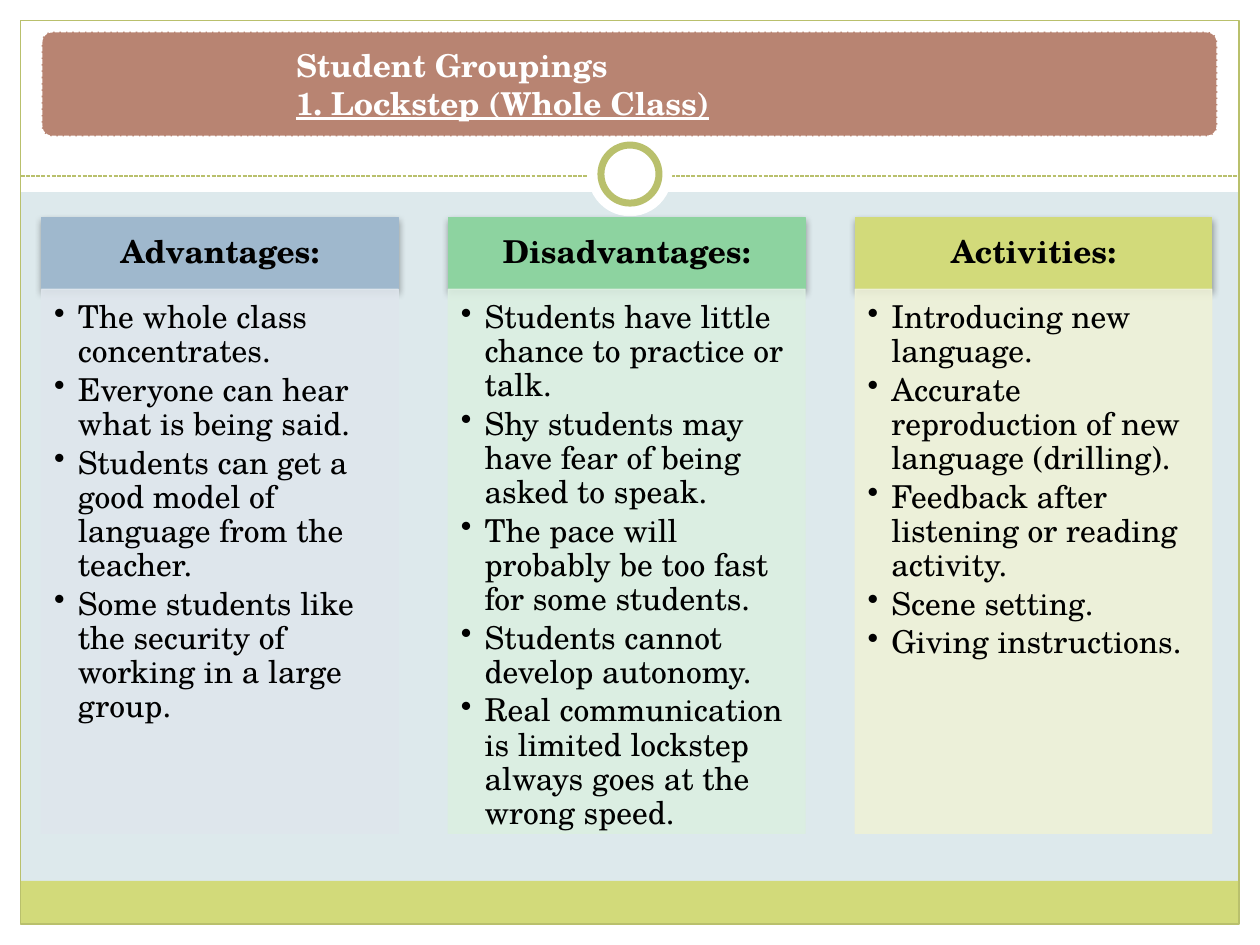
from lxml.etree import SubElement
from pptx import Presentation
from pptx.dml.color import RGBColor
from pptx.enum.dml import MSO_LINE
from pptx.enum.shapes import MSO_CONNECTOR, MSO_SHAPE
from pptx.enum.text import MSO_ANCHOR as ANCHOR, PP_ALIGN as ALIGN
from pptx.oxml.ns import qn
from pptx.util import Cm, Pt

FONT = "TeX Gyre Schola"
BLACK = RGBColor(0x00, 0x00, 0x00)
WHITE = RGBColor(0xFF, 0xFF, 0xFF)
PALE_BLUE = RGBColor(0xDD, 0xE9, 0xEC)
LIME = RGBColor(0xD2, 0xDA, 0x7A)
OLIVE = RGBColor(0xB9, 0xC0, 0x6C)
CLAY = RGBColor(0xB8, 0x84, 0x72)
BLUE = RGBColor(0x9F, 0xB8, 0xCD)
BLUE_TINT = RGBColor(0xDF, 0xE6, 0xED)
GREEN = RGBColor(0x8D, 0xD3, 0xA0)
GREEN_TINT = RGBColor(0xDB, 0xEF, 0xE1)
LIME_TINT = RGBColor(0xEE, 0xF1, 0xD7)

SLIDE_W, SLIDE_H = 25.4, 19.05
MARGIN = 0.42
COLUMN_LEFT, COLUMN_PITCH, COLUMN_W = 0.84, 8.2, 7.19
HEADER_TOP, HEADER_H, BODY_H = 4.39, 1.44, 10.97

COLUMNS = [
    ("Advantages:", BLUE, BLUE_TINT, [
        "The whole class concentrates.",
        "Everyone can hear what is being said.",
        "Students can get a good model of language from the teacher.",
        "Some students like the security of working in a large group.",
    ]),
    ("Disadvantages:", GREEN, GREEN_TINT, [
        "Students have little chance to practice or talk.",
        "Shy students may have fear of being asked to speak.",
        "The pace will probably be too fast for some students.",
        "Students cannot develop autonomy.",
        "Real communication is limited lockstep always goes at the wrong speed.",
    ]),
    ("Activities:", LIME, LIME_TINT, [
        "Introducing new language.",
        "Accurate reproduction of new language (drilling).",
        "Feedback after listening or reading activity.",
        "Scene setting.",
        "Giving instructions.",
    ]),
]


def add_block(slide, box, fill=None, line=None, line_width=0.75, kind=MSO_SHAPE.RECTANGLE):
    block = slide.shapes.add_shape(kind, *map(Cm, box))
    block.shadow.inherit = False
    if fill is None:
        block.fill.background()
    else:
        block.fill.solid()
        block.fill.fore_color.rgb = fill
    if line is None:
        block.line.fill.background()
    else:
        block.line.color.rgb = line
        block.line.width = Pt(line_width)
    return block


def add_divider(slide, y):
    divider = slide.shapes.add_connector(
        MSO_CONNECTOR.STRAIGHT, Cm(MARGIN), Cm(y), Cm(SLIDE_W - MARGIN), Cm(y))
    divider.line.color.rgb = OLIVE
    divider.line.width = Pt(0.75)
    divider.line.dash_style = MSO_LINE.SQUARE_DOT
    SubElement(divider._element.spPr, qn("a:effectLst"))


def write_text(holder, lines, insets, anchor, color=BLACK, bold=False,
               align=ALIGN.LEFT, spacing=1.0, after=0):
    frame = holder.text_frame
    frame.word_wrap = True
    frame.vertical_anchor = anchor
    (frame.margin_left, frame.margin_top,
     frame.margin_right, frame.margin_bottom) = map(Cm, insets)
    frame.text = "\n".join(lines)
    for paragraph in frame.paragraphs:
        paragraph.alignment = align
        paragraph.line_spacing = spacing
        paragraph.space_after = Pt(after)
        font = paragraph.font
        font.name, font.size, font.bold = FONT, Pt(18), bold
        font.color.rgb = color
    return frame.paragraphs


def add_bullet(paragraph):
    properties = paragraph._p.get_or_add_pPr()
    properties.set("marL", str(Cm(0.48)))
    properties.set("indent", str(-Cm(0.48)))
    bullet = properties.makeelement(qn("a:buChar"), {"char": "•"})
    properties.insert_element_before(bullet, "a:tabLst", "a:defRPr", "a:extLst")


def set_alpha(shape, percent):
    for color in shape._element.spPr.iter(qn("a:srgbClr")):
        SubElement(color, qn("a:alpha"), val=str(percent * 1000))


def add_soft_shadow(shape):
    effects = shape._element.spPr.find(qn("a:effectLst"))
    shadow = SubElement(effects, qn("a:outerShdw"), blurRad=str(Pt(4)),
                        dist=str(Pt(2)), dir="5400000", rotWithShape="0")
    color = SubElement(shadow, qn("a:srgbClr"), val=str(BLACK))
    SubElement(color, qn("a:alpha"), val="35000")


def add_backdrop(slide):
    # White borders around the page
    for box in [
        (0, SLIDE_H - MARGIN, SLIDE_W, MARGIN),
        (0, 0, SLIDE_W, 3.87),
        (0, 0, MARGIN, SLIDE_H),
        (SLIDE_W - MARGIN, 0, MARGIN, SLIDE_H),
    ]:
        add_block(slide, box, WHITE)

    # Footer band, frame and divider
    inner_w = SLIDE_W - 2 * MARGIN
    add_block(slide, (MARGIN, 17.76, inner_w, 0.87), LIME)
    add_block(slide, (MARGIN, MARGIN, inner_w, SLIDE_H - 2 * MARGIN), line=OLIVE)
    add_divider(slide, 3.55)

    # Ring on the divider
    for size, line in [(1.7, None), (1.17, OLIVE)]:
        box = (SLIDE_W / 2 - size / 2, 3.51 - size / 2, size, size)
        add_block(slide, box, WHITE, line, 4, MSO_SHAPE.OVAL)


def add_title(slide):
    banner = add_block(slide, (0.84, 0.64, 23.7, 2.11), CLAY, WHITE, 0.9,
                       MSO_SHAPE.ROUNDED_RECTANGLE)
    banner.adjustments[0] = 0.1
    banner.line.dash_style = MSO_LINE.SQUARE_DOT
    title = slide.shapes.add_textbox(Cm(5.79), Cm(0.64), Cm(18.75), Cm(2.11))
    heading, topic = write_text(
        title, ["Student Groupings", "1. Lockstep (Whole Class)"],
        [0.18] * 4, ANCHOR.MIDDLE, WHITE, bold=True)
    topic.font.underline = True


def add_column(slide, left, heading, color, tint, points):
    header = add_block(slide, (left, HEADER_TOP, COLUMN_W, HEADER_H), color, color)
    add_soft_shadow(header)
    write_text(header, [heading], (0.36, 0.2, 0.36, 0.2), ANCHOR.MIDDLE,
               bold=True, align=ALIGN.CENTER, spacing=0.9)

    body = add_block(slide, (left, HEADER_TOP + HEADER_H, COLUMN_W, BODY_H), tint, tint)
    set_alpha(body, 90)
    for paragraph in write_text(body, points, (0.25, 0.25, 0.36, 0.41), ANCHOR.TOP,
                                spacing=0.9, after=2.7):
        add_bullet(paragraph)


def main():
    deck = Presentation()
    deck.slide_width, deck.slide_height = Cm(SLIDE_W), Cm(SLIDE_H)
    slide = deck.slides.add_slide(deck.slide_layouts[6])
    slide.background.fill.solid()
    slide.background.fill.fore_color.rgb = PALE_BLUE

    add_backdrop(slide)
    add_title(slide)
    for index, column in enumerate(COLUMNS):
        add_column(slide, COLUMN_LEFT + index * COLUMN_PITCH, *column)
    deck.save("out.pptx")


if __name__ == "__main__":
    main()
